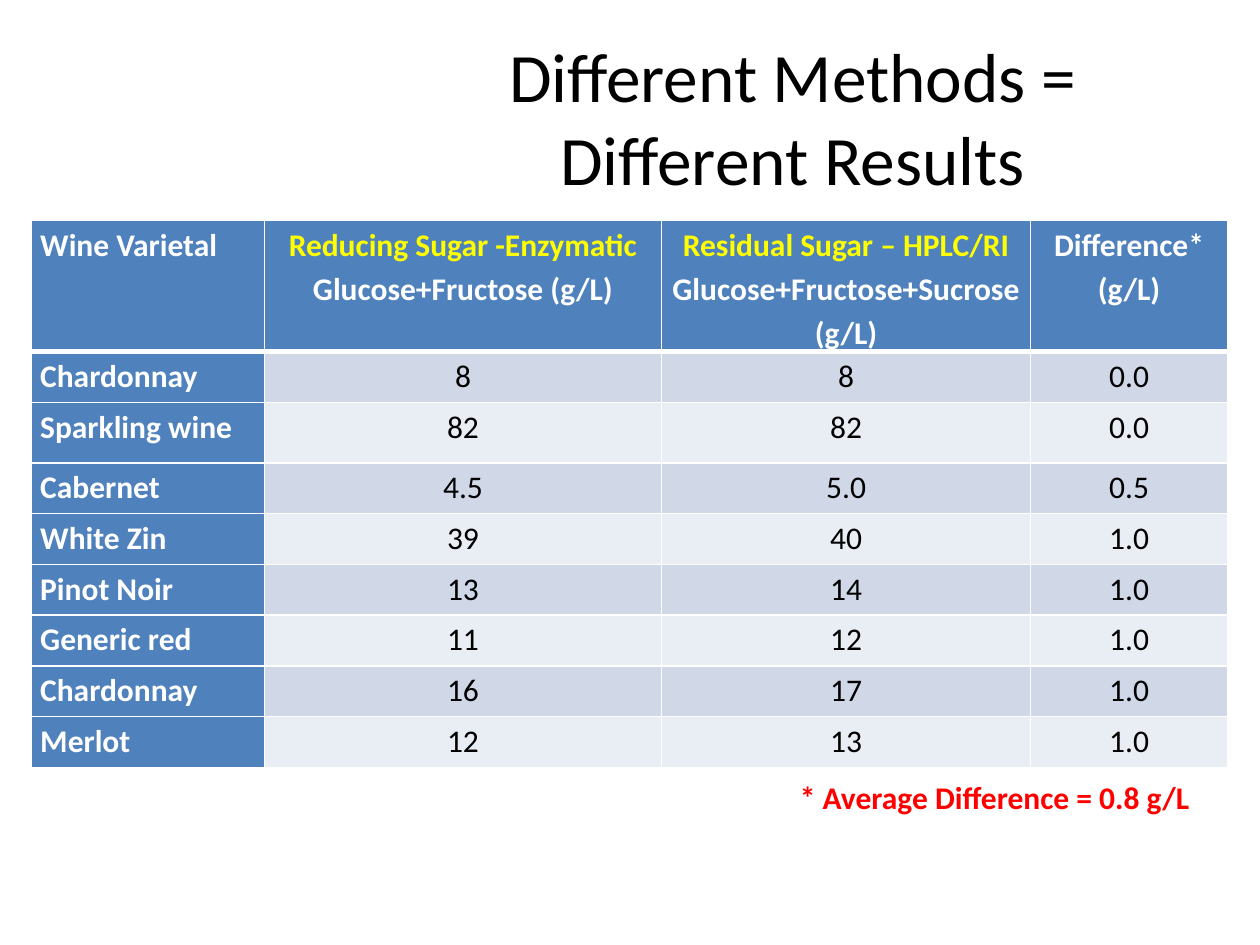
from lxml import etree
from pptx import Presentation
from pptx.dml.color import RGBColor
from pptx.enum.text import MSO_ANCHOR, PP_ALIGN
from pptx.oxml.ns import qn
from pptx.util import Pt

LEFT, CENTER = PP_ALIGN.LEFT, PP_ALIGN.CENTER
TOP, MIDDLE = MSO_ANCHOR.TOP, MSO_ANCHOR.MIDDLE

TITLE = "Different Methods = Different Results"
FOOTNOTE = "* Average Difference = 0.8 g/L"
# Each heading is a list of (text, colour name) lines
HEADINGS = [
    [("Wine Varietal", "white")],
    [("Reducing Sugar -Enzymatic", "yellow"), ("Glucose+Fructose (g/L)", "white")],
    [("Residual Sugar – HPLC/RI", "yellow"), ("Glucose+Fructose+Sucrose (g/L)", "white")],
    [("Difference*", "white"), ("(g/L)", "white")],
]
WINES = [
    ("Chardonnay", "8", "8", "0.0"),
    ("Sparkling wine", "82", "82", "0.0"),
    ("Cabernet", "4.5", "5.0", "0.5"),
    ("White Zin", "39", "40", "1.0"),
    ("Pinot Noir", "13", "14", "1.0"),
    ("Generic red", "11", "12", "1.0"),
    ("Chardonnay", "16", "17", "1.0"),
    ("Merlot", "12", "13", "1.0"),
]

THEME = {
    "font": "Calibri", "title_size": 39.6, "body_size": 18, "line_spacing": 1.15,
    "white": "FFFFFF", "black": "000000", "yellow": "FFFF00", "red": "FF0000",
    "blue": "4F81BD", "bands": ("D0D8E8", "E9EDF4"),
}

COLUMN_WIDTHS = (133.2, 226.8, 211, 112.5)
HEADER_HEIGHT, ROW_HEIGHT, TALL_ROW_HEIGHT = 75, 29, 34.5
TALL_WINE = "Sparkling wine"
CELL_MARGIN = 5


def color(name):
    return RGBColor.from_string(THEME[name])


def add_lines(frame, lines, size, bold, alignment, line_spacing=None):
    """Write (text, colour name) pairs as one paragraph each."""
    for index, (text, color_name) in enumerate(lines):
        paragraph = frame.add_paragraph() if index else frame.paragraphs[0]
        paragraph.alignment = alignment
        if line_spacing:
            paragraph.line_spacing = line_spacing
        run = paragraph.add_run()
        run.text = text
        run.font.name = THEME["font"]
        run.font.size = Pt(size)
        run.font.bold = bold
        run.font.color.rgb = color(color_name)


def add_text(slide, box, text, size, bold, color_name, alignment, anchor):
    frame = slide.shapes.add_textbox(*map(Pt, box)).text_frame
    frame.word_wrap = True
    frame.vertical_anchor = anchor
    add_lines(frame, [(text, color_name)], size, bold, alignment)


def set_borders(cell, top, bottom):
    """Draw white borders; top and bottom widths are in points."""
    properties = cell._tc.get_or_add_tcPr()
    for side, width in (("L", 1), ("R", 1), ("T", top), ("B", bottom)):
        line = etree.SubElement(properties, qn(f"a:ln{side}"), w=str(Pt(width)))
        fill = etree.SubElement(line, qn("a:solidFill"))
        etree.SubElement(fill, qn("a:srgbClr"), val=THEME["white"])


def fill_cell(cell, lines, bold, alignment, fill, top=1, bottom=1):
    cell.margin_left = cell.margin_right = Pt(CELL_MARGIN)
    cell.margin_top = cell.margin_bottom = 0
    cell.vertical_anchor = TOP
    set_borders(cell, top, bottom)
    cell.fill.solid()
    cell.fill.fore_color.rgb = RGBColor.from_string(fill)
    add_lines(cell.text_frame, lines, THEME["body_size"], bold, alignment,
              THEME["line_spacing"])


def add_wine_table(slide, left, top):
    heights = [HEADER_HEIGHT] + [
        TALL_ROW_HEIGHT if wine[0] == TALL_WINE else ROW_HEIGHT for wine in WINES]
    table = slide.shapes.add_table(
        len(heights), len(COLUMN_WIDTHS), Pt(left), Pt(top),
        Pt(sum(COLUMN_WIDTHS)), Pt(sum(heights))).table
    table.first_col = True
    for column, width in zip(table.columns, COLUMN_WIDTHS):
        column.width = Pt(width)
    for row, height in zip(table.rows, heights):
        row.height = Pt(height)

    for column, lines in enumerate(HEADINGS):
        fill_cell(table.cell(0, column), lines, True, CENTER if column else LEFT,
                  THEME["blue"], bottom=3)
    for row, wine in enumerate(WINES, start=1):
        top_width = 3 if row == 1 else 1
        band = THEME["bands"][(row - 1) % 2]
        for column, text in enumerate(wine):
            cell = table.cell(row, column)
            if column:
                fill_cell(cell, [(text, "black")], False, CENTER, band, top_width)
            else:
                fill_cell(cell, [(text, "white")], True, LEFT, THEME["blue"], top_width)


def main():
    presentation = Presentation()
    presentation.slide_width, presentation.slide_height = Pt(720), Pt(540)
    slide = presentation.slides.add_slide(presentation.slide_layouts[6])
    add_text(slide, (222, 21.6, 462, 90), TITLE, THEME["title_size"], False,
             "black", CENTER, MIDDLE)
    add_wine_table(slide, 18, 126)
    add_text(slide, (450, 440.9, 247.7, 29), FOOTNOTE, THEME["body_size"], True,
             "red", LEFT, TOP)
    presentation.save("out.pptx")


if __name__ == "__main__":
    main()
